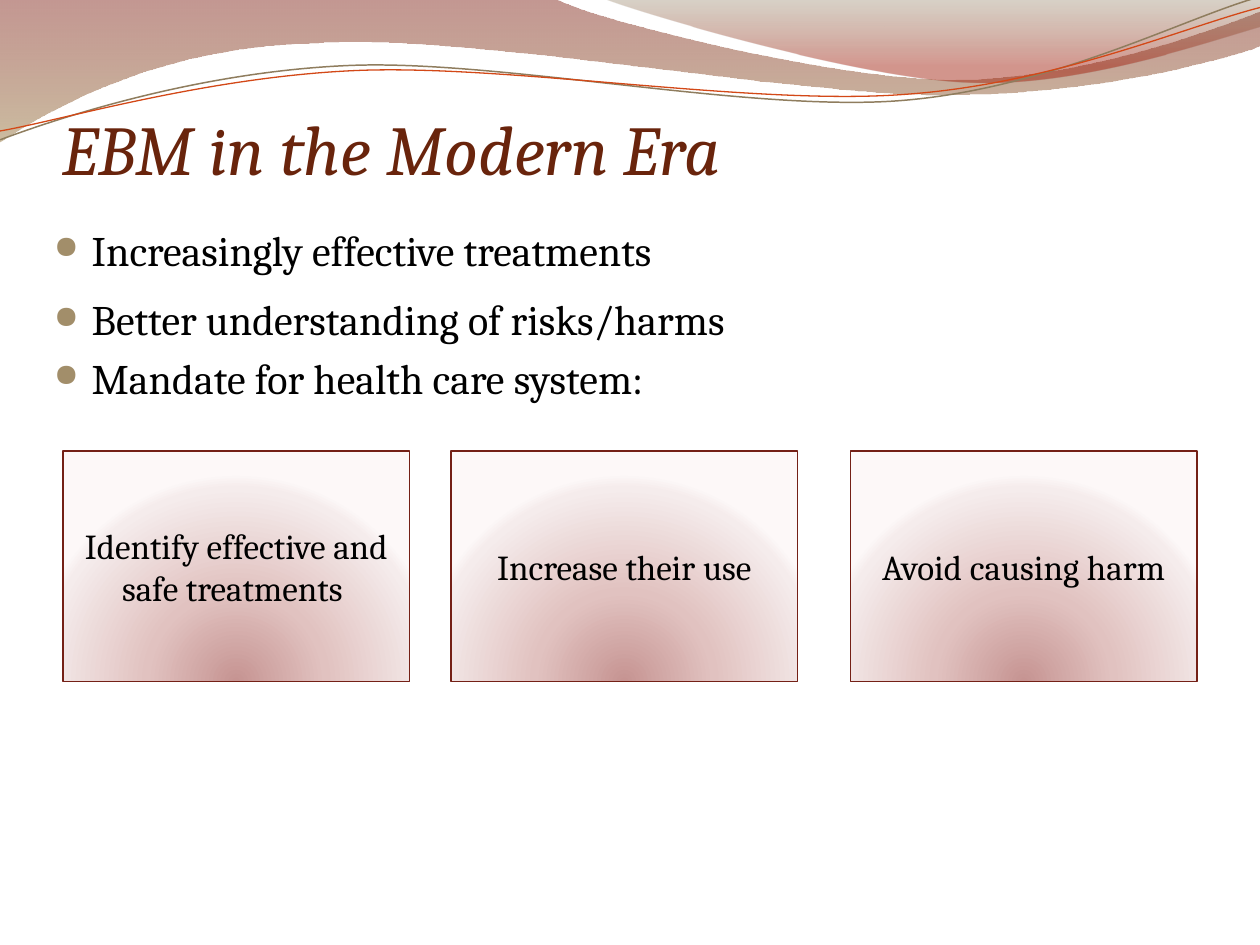
import math

from lxml import etree
from pptx import Presentation
from pptx import util as u
from pptx.dml import color
from pptx.enum import shapes, text
from pptx.oxml import ns

FONT = "Cambria"
WAVES = [
    # start point, then line (2 numbers) or cubic curve (6 numbers) segments
    dict(start=(0, 0), closed=True, stops=[(0, "7C1A0E", 45), (100, "A18552", 55)],
         segments=[(4.4, -0.01), (4.76, 0.17, 6.64, 0.63, 7.58, 0.63),
                   (8.53, 0.63, 9.58, 0.26, 10, 0.09), (10.01, 0.36),
                   (9.83, 0.44, 8.7, 0.76, 7.46, 0.75), (6.22, 0.75, 3.82, 0.28, 2.57, 0.34),
                   (1.29, 0.36, 0.46, 0.83, -0.01, 1.13)]),
    dict(start=(4.79, -0.01), closed=True, stops=[(0, "7E6B48", 30), (80, "9F1705", 45)],
         segments=[(5.09, 0.11, 6.82, 0.62, 7.69, 0.65), (8.56, 0.69, 9.61, 0.32, 10, 0.21),
                   (10, 0)]),
    dict(start=(0, 1.11), closed=False, line=("8F7D5E", 0.85), tilt=-2.7, pivot=(4.99, 0.58),
         segments=[(0.48, 0.93, 1.58, 0.57, 2.77, 0.52), (3.95, 0.47, 5.93, 0.89, 7.13, 0.8),
                   (8.33, 0.71, 9.38, 0.15, 9.98, -0.02)]),
    dict(start=(0, 1.04), closed=False, line=("D34817", 0.75), tilt=-2.7, pivot=(5, 0.59),
         segments=[(0.47, 0.96, 1.64, 0.61, 2.83, 0.56), (4.03, 0.51, 5.97, 0.84, 7.17, 0.75),
                   (8.36, 0.67, 9.41, 0.21, 10, 0.06)]),
]
BULLETS = ["Increasingly effective treatments", "Better understanding of risks/harms",
           "Mandate for health care system:"]
MANDATES = ["Identify effective and safe treatments ", "Increase their use", "Avoid causing harm"]
CARD_STOPS = [(0, "C69492", 100), (43, "E1C2C0", 100), (93, "F5ECEC", 100), (100, "FDF8F8", 100)]


def rgb(value):
    return color.RGBColor.from_string(value)


def add_element(parent, tag, **attributes):
    element = etree.SubElement(parent, ns.qn(tag))
    for name, value in attributes.items():
        element.set(name, str(value))
    return element


def set_format(target, values):
    for name, value in values.items():
        setattr(target, name, value)


def set_font(paragraph, size, value, **extra):
    set_format(paragraph.font, dict(name=FONT, size=u.Pt(size), **extra))
    paragraph.font.color.rgb = rgb(value)


def set_line(shape, value, width):
    shape.line.color.rgb = rgb(value)
    shape.line.width = u.Pt(width)


def set_gradient(shape, stops, radial=False):
    """Fill top to bottom, or in circles around the bottom edge, with (position, colour, opacity) stops."""
    shape.fill.gradient()
    gradient = shape._element.spPr.find(ns.qn("a:gradFill"))
    for child in list(gradient):
        gradient.remove(child)
    stop_list = add_element(gradient, "a:gsLst")
    for position, value, opacity in stops:
        stop = add_element(stop_list, "a:gs", pos=position * 1000)
        fill_color = add_element(stop, "a:srgbClr", val=value)
        if opacity < 100:
            add_element(fill_color, "a:alpha", val=opacity * 1000)
    if radial:
        path = add_element(gradient, "a:path", path="circle")
        add_element(path, "a:fillToRect", l=50000, t=130000, r=50000, b=-30000)
    else:
        add_element(gradient, "a:lin", ang=5400000, scaled=0)


def turn(point, pivot, degrees):
    """Return the point in EMU after a clockwise turn around the pivot."""
    angle = math.radians(degrees)
    x, y = point[0] - pivot[0], point[1] - pivot[1]
    return (u.Inches(pivot[0] + x * math.cos(angle) - y * math.sin(angle)),
            u.Inches(pivot[1] + x * math.sin(angle) + y * math.cos(angle)))


def bend(shape, curves):
    """Turn the straight segments that have control points into cubic curves."""
    for segment, points in zip(list(shape._element.iter(ns.qn("a:lnTo"))), curves):
        if len(points) == 3:
            curve = etree.Element(ns.qn("a:cubicBezTo"))
            for x, y in points:
                add_element(curve, "a:pt", x=x - shape.left, y=y - shape.top)
            segment.getparent().replace(segment, curve)


def add_wave(slide, start, segments, closed, stops=None, line=None, tilt=0, pivot=(0, 0)):
    curves = [[turn(point, pivot, -tilt) for point in zip(segment[::2], segment[1::2])]
              for segment in segments]
    builder = slide.shapes.build_freeform(*turn(start, pivot, -tilt))
    builder.add_line_segments([points[-1] for points in curves], close=closed)
    shape = builder.convert_to_shape()
    bend(shape, curves)
    shape.rotation = tilt
    shape.shadow.inherit = False
    if stops:
        set_gradient(shape, stops)
        shape.line.fill.background()
    else:
        shape.fill.background()
        set_line(shape, *line)


def add_text_frame(slide, box, **values):
    frame = slide.shapes.add_textbox(*map(u.Inches, box)).text_frame
    set_format(frame, dict(word_wrap=True, **values))
    return frame


def add_title(slide, box, title):
    frame = add_text_frame(slide, box, margin_left=0, margin_right=0, margin_bottom=0,
                           vertical_anchor=text.MSO_ANCHOR.BOTTOM)
    frame.text = title
    set_font(frame.paragraphs[0], 40, "69240C", italic=True)


def add_bullets(slide, box, lines):
    frame = add_text_frame(slide, box)
    frame.text = "\n".join(lines)
    for index, paragraph in enumerate(frame.paragraphs):
        properties = paragraph._p.get_or_add_pPr()
        properties.set("marL", str(u.Inches(0.3)))
        properties.set("indent", str(u.Inches(-0.3)))
        if index:
            paragraph.space_before = u.Pt(4.8)
        else:
            paragraph.space_after = u.Pt(6)
        add_element(add_element(properties, "a:buClr"), "a:srgbClr", val="A28E6A")
        add_element(properties, "a:buSzPct", val=75000)
        add_element(properties, "a:buChar", char="●")
        set_font(paragraph, 24, "000000")


def add_card(slide, box, label):
    card = slide.shapes.add_shape(shapes.MSO_SHAPE.FLOWCHART_PROCESS, *map(u.Inches, box))
    card.shadow.inherit = False
    set_gradient(card, CARD_STOPS, radial=True)
    set_line(card, "742016", 0.75)
    frame = card.text_frame
    set_format(frame, dict(word_wrap=True, vertical_anchor=text.MSO_ANCHOR.MIDDLE))
    frame.text = label
    frame.paragraphs[0].alignment = text.PP_ALIGN.CENTER
    set_font(frame.paragraphs[0], 20, "000000")


def main():
    presentation = Presentation()
    set_format(presentation, dict(slide_width=u.Inches(10), slide_height=u.Inches(7.5)))
    slide = presentation.slides.add_slide(presentation.slide_layouts[6])
    for wave in WAVES:
        add_wave(slide, **wave)
    add_title(slide, (0.5, 0.25, 9, 1.25), "EBM in the Modern Era")
    add_bullets(slide, (0.33, 1.73, 9.5, 1.7), BULLETS)
    for left, label in zip((0.5, 3.58, 6.75), MANDATES):
        add_card(slide, (left, 3.58, 2.75, 1.83), label)
    presentation.save("out.pptx")


if __name__ == "__main__":
    main()
